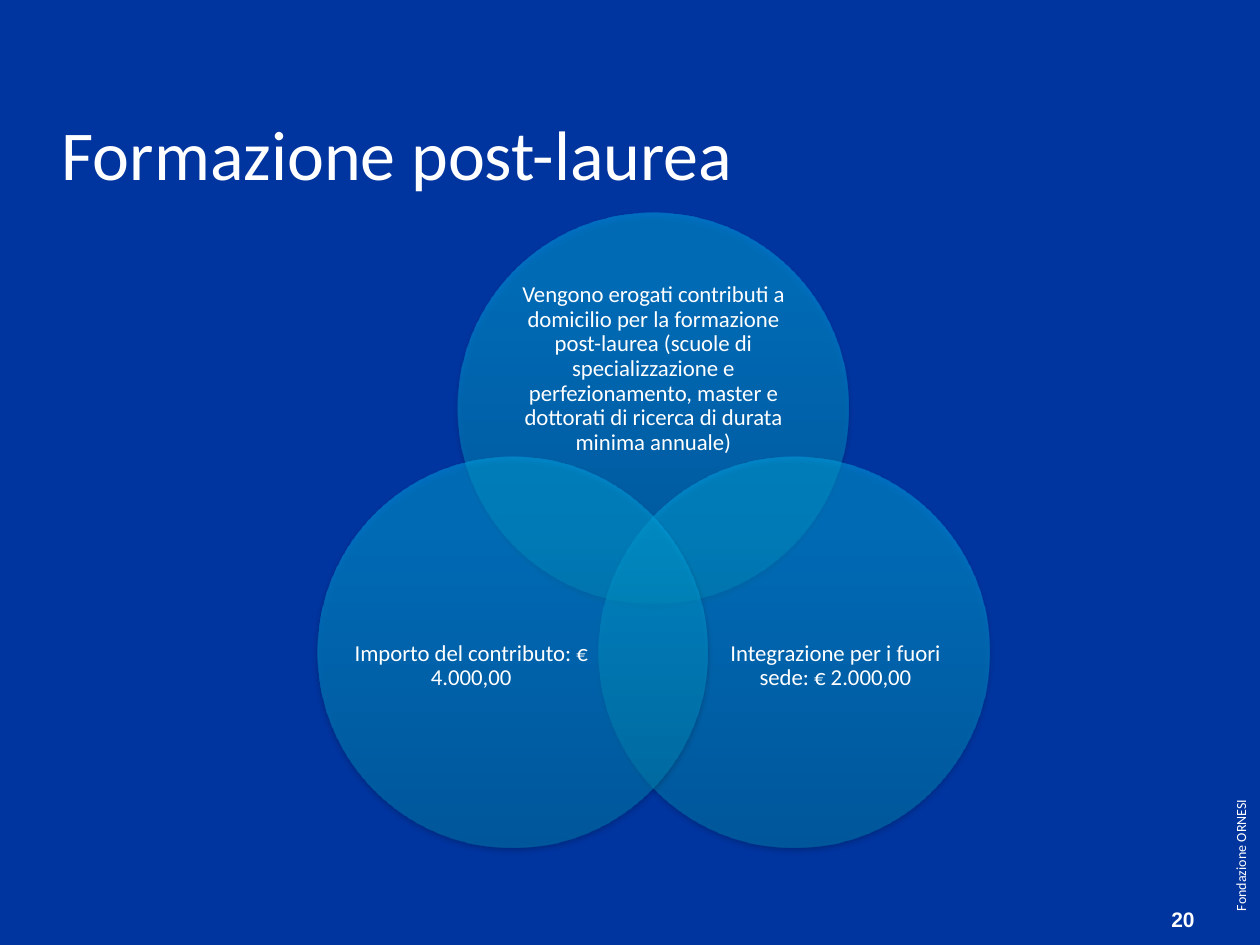
from dataclasses import dataclass
from math import cos, radians, sin
from typing import NamedTuple

from pptx import Presentation
from pptx import util as u
from pptx.dml.color import RGBColor
from pptx.enum import shapes, text
from pptx.oxml import ns, parse_xml

COLS, ROWS = 100, 75
MID_X, MID_Y, REACH, SIZE = 51.85, 45.3, 12.9, 31


@dataclass(frozen=True)
class Theme:
    """Colours, fonts and type sizes."""
    back: str = "00349E"
    ink: str = "FFFFFF"
    stops: tuple = ((0, "0083B3"), (80, "00ABE9"), (100, "00ABEA"))
    shade: str = "000000"
    face: str = "Calibri"
    plain: str = "Arial"
    head: int = 40
    body: int = 13
    note: int = 12
    side: int = 8


class Box(NamedTuple):
    """A place in grid columns and rows."""
    x: float
    y: float
    w: float
    h: float


class Ring(NamedTuple):
    """A circle's angle, its label and the label's place."""
    turn: int
    label: str
    box: Box


THEME = Theme()
RINGS = (
    Ring(-90, "Vengono erogati contributi a domicilio per la formazione post-laurea "
         "(scuole di specializzazione e perfezionamento, master e dottorati di ricerca "
         "di durata minima annuale)", Box(40.5, 22.3, 22.7, 14)),
    Ring(30, "Integrazione per i fuori sede: € 2.000,00", Box(57, 44.3, 18.6, 17.1)),
    Ring(150, "Importo del contributo: € 4.000,00", Box(28.1, 44.3, 18.6, 17.1)),
)


def place(deck, box: Box) -> list:
    """Turn grid units into slide lengths."""
    col, row = deck.slide_width / COLS, deck.slide_height / ROWS
    return [round(n) for n in (box.x * col, box.y * row, box.w * col, box.h * row)]


def write(shape, words: str, size: int, face: str = THEME.face, bold: bool = False,
          align=text.PP_ALIGN.LEFT, anchor=text.MSO_ANCHOR.MIDDLE,
          inset=None, line=None, after=None) -> None:
    """Fill a shape with one formatted paragraph."""
    frame = shape.text_frame
    frame.text, frame.word_wrap = words, True
    frame.auto_size, frame.vertical_anchor = text.MSO_AUTO_SIZE.NONE, anchor
    if inset is not None:
        frame.margin_left = frame.margin_right = inset
        frame.margin_top = frame.margin_bottom = inset
    para = frame.paragraphs[0]
    para.alignment, para.line_spacing, para.space_after = align, line, after
    font = para.runs[0].font
    font.name, font.size, font.bold = face, u.Pt(size), bold
    font.color.rgb = RGBColor.from_string(THEME.ink)


def disc(deck, slide, ring: Ring) -> None:
    """Draw one translucent circle with its label."""
    turn = radians(ring.turn)
    spot = Box(MID_X + REACH * cos(turn) - SIZE / 2,
               MID_Y + REACH * sin(turn) - SIZE / 2, SIZE, SIZE)
    shape = slide.shapes.add_shape(shapes.MSO_SHAPE.OVAL, *place(deck, spot))
    stops = "".join(
        f'<a:gs pos="{pos * 1000}"><a:srgbClr val="{tint}"><a:alpha val="50000"/>'
        f'</a:srgbClr></a:gs>' for pos, tint in THEME.stops)
    props = shape.element.spPr
    props.append(parse_xml(
        f'<a:gradFill {ns.nsdecls("a")} rotWithShape="1"><a:gsLst>{stops}</a:gsLst>'
        '<a:lin ang="16200000" scaled="0"/></a:gradFill>'))
    shape.line.fill.background()
    shape.shadow.inherit = False
    props.find(ns.qn("a:effectLst")).append(parse_xml(
        f'<a:outerShdw {ns.nsdecls("a")} blurRad="{u.Pt(3.1)}" dist="{u.Pt(1.8)}" '
        f'dir="5400000" rotWithShape="0"><a:srgbClr val="{THEME.shade}">'
        '<a:alpha val="35000"/></a:srgbClr></a:outerShdw>'))
    label = slide.shapes.add_textbox(*place(deck, ring.box))
    write(label, ring.label, THEME.body, align=text.PP_ALIGN.CENTER,
          inset=0, line=0.9, after=u.Pt(4.5))


def main() -> None:
    """Build and save the slide."""
    deck = Presentation()
    deck.slide_width, deck.slide_height = u.Inches(10), u.Inches(7.5)
    slide = deck.slides.add_slide(deck.slide_layouts[5])
    fill = slide.background.fill
    fill.solid()
    fill.fore_color.rgb = RGBColor.from_string(THEME.back)

    title = slide.shapes.title
    title.left, title.top, title.width, title.height = place(deck, Box(3.9, 2.5, 84, 13.4))
    write(title, "Formazione post-laurea", THEME.head, anchor=text.MSO_ANCHOR.BOTTOM)

    side = slide.shapes.add_textbox(*place(deck, Box(81.2, 54.8, 34.6, 2.4)))
    side.rotation = 270
    write(side, "Fondazione ORNESI", THEME.side, anchor=text.MSO_ANCHOR.TOP)

    for ring in RINGS:
        disc(deck, slide, ring)

    page = slide.shapes.add_textbox(*place(deck, Box(86.2, 71.6, 9.6, 2.7)))
    write(page, "20", THEME.note, face=THEME.plain, bold=True, align=text.PP_ALIGN.RIGHT)
    deck.save("out.pptx")


if __name__ == "__main__":
    main()
